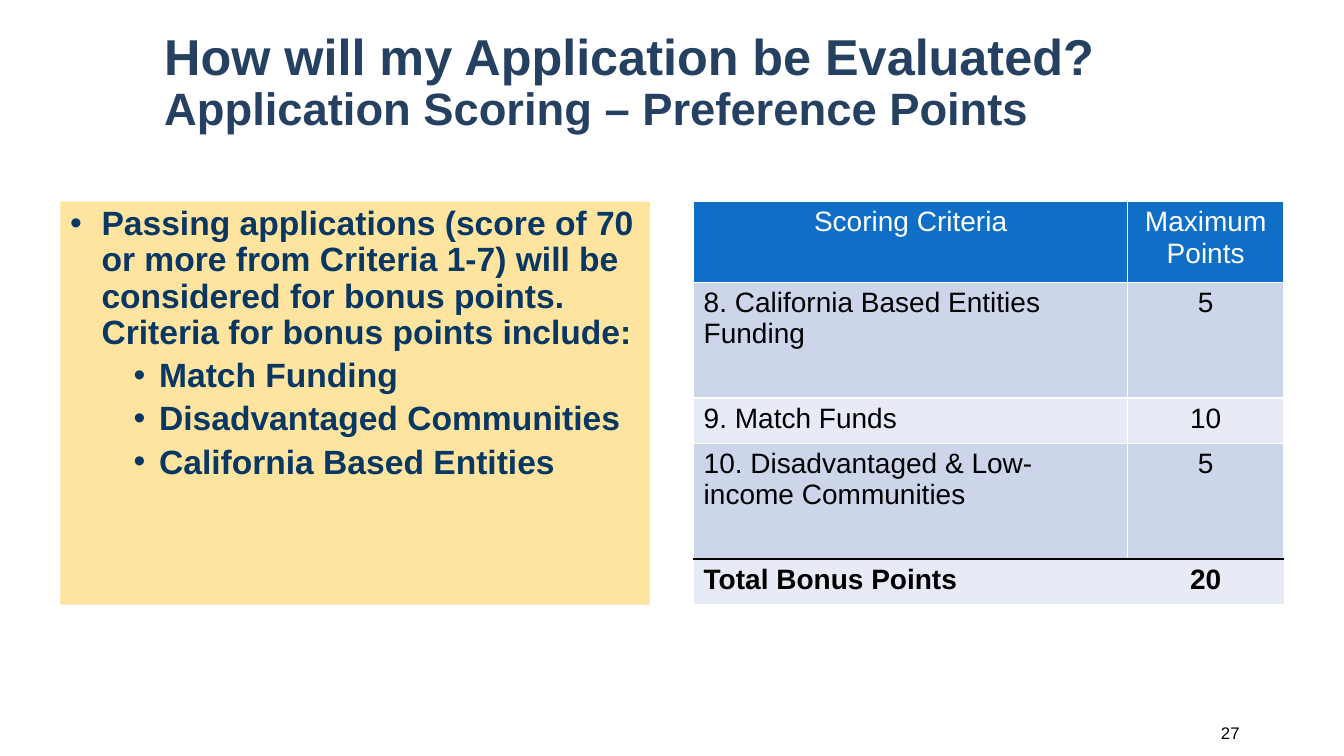
from dataclasses import dataclass

from lxml import etree
from pptx import Presentation
from pptx import util as u
from pptx.dml.color import RGBColor
from pptx.enum import shapes, text
from pptx.oxml import ns


@dataclass(frozen=True)
class Theme:
    font: str = "Arial"
    heading: str = "254061"
    criteria_text: str = "083763"
    panel: str = "FFE49F"
    header: str = "0F6FC6"
    bands: tuple = ("CCD5EA", "E7EBF5")
    white: str = "FFFFFF"
    black: str = "000000"
    title_size: float = 36
    subtitle_size: float = 32.4
    bullet_size: float = 24
    table_size: float = 20
    number_size: float = 12


def write(paragraph, words, *, font, size, color, bold=False, align=None, spacing=None, before=None):
    """Append formatted words to a paragraph."""
    if align is not None:
        paragraph.alignment = align
    if spacing is not None:
        paragraph.line_spacing = spacing
    if before is not None:
        paragraph.space_before = u.Pt(before)
    run = paragraph.add_run()
    run.text = words
    run.font.name = font
    run.font.size = u.Pt(size)
    run.font.bold = bold
    run.font.color.rgb = RGBColor.from_string(color)


class SlideBuilder:
    def __init__(self, slide, theme):
        self.slide, self.theme = slide, theme

    def text_box(self, *box):
        """Add a middle-anchored text box and return its first paragraph."""
        frame = self.slide.shapes.add_textbox(*map(u.Cm, box)).text_frame
        frame.word_wrap = True
        frame.vertical_anchor = text.MSO_ANCHOR.MIDDLE
        return frame.paragraphs[0]

    def title(self, heading, subtitle, *box):
        t = self.theme
        paragraph = self.text_box(*box)
        style = dict(font=t.font, color=t.heading, bold=True, spacing=0.9)
        write(paragraph, heading, size=t.title_size, **style)
        paragraph.add_line_break()
        write(paragraph, subtitle, size=t.subtitle_size, **style)

    def bullet_panel(self, items, *box):
        """Items are (level, words) pairs."""
        t = self.theme
        panel = self.slide.shapes.add_shape(shapes.MSO_SHAPE.RECTANGLE, *map(u.Cm, box))
        panel.shadow.inherit = False
        panel.fill.solid()
        panel.fill.fore_color.rgb = RGBColor.from_string(t.panel)
        panel.line.fill.background()
        frame = panel.text_frame
        frame.word_wrap = True
        frame.vertical_anchor = text.MSO_ANCHOR.TOP
        for index, (level, words) in enumerate(items):
            paragraph = frame.add_paragraph() if index else frame.paragraphs[0]
            paragraph.level = level
            margin, hang = ((0.79, 0.79), (2.24, 0.64))[level]
            props = paragraph._p.get_or_add_pPr()
            props.set("marL", str(u.Cm(margin)))
            props.set("indent", str(-u.Cm(hang)))
            etree.SubElement(props, ns.qn("a:buFont"), typeface=t.font)
            etree.SubElement(props, ns.qn("a:buChar"), char="•")
            write(paragraph, words, font=t.font, size=t.bullet_size, color=t.criteria_text, bold=True,
                  align=text.PP_ALIGN.LEFT, spacing=0.9, before=5 if index else 0)

    def borders(self, cell, **colors):
        """Draw 1 pt cell edges by side; a side without a colour gets no line."""
        props = cell._tc.get_or_add_tcPr()
        for side in "LRTB":
            edge = etree.SubElement(props, ns.qn(f"a:ln{side}"), w=str(u.Pt(1)))
            if colors.get(side):
                fill = etree.SubElement(edge, ns.qn("a:solidFill"))
                etree.SubElement(fill, ns.qn("a:srgbClr"), val=colors[side])
            else:
                etree.SubElement(edge, ns.qn("a:noFill"))

    def score_table(self, rows, widths, heights, left, top):
        t = self.theme
        box = (left, top, sum(widths), sum(heights))
        table = self.slide.shapes.add_table(len(rows), len(widths), *map(u.Cm, box)).table
        for column, width in zip(table.columns, widths):
            column.width = u.Cm(width)
        total = len(rows) - 1
        for r, (row, height) in enumerate(zip(rows, heights)):
            table.rows[r].height = u.Cm(height)
            for c, words in enumerate(row):
                cell = table.cell(r, c)
                if r == total:
                    self.borders(cell, T=t.black)
                else:
                    bottom = t.black if r == total - 1 else t.white
                    self.borders(cell, L=t.white, R=t.white, T=t.white, B=bottom)
                cell.fill.solid()
                fill = t.bands[(r - 1) % 2] if r else t.header
                cell.fill.fore_color.rgb = RGBColor.from_string(fill)
                centred = r == 0 or c == 1
                write(cell.text_frame.paragraphs[0], words, font=t.font, size=t.table_size,
                      color=t.black if r else t.white, bold=r == total,
                      align=text.PP_ALIGN.CENTER if centred else text.PP_ALIGN.LEFT)

    def page_number(self, number, *box):
        t = self.theme
        write(self.text_box(*box), number, font=t.font, size=t.number_size, color=t.black,
              align=text.PP_ALIGN.RIGHT)


def main():
    deck = Presentation()
    deck.slide_width, deck.slide_height = u.Cm(33.87), u.Cm(19.05)
    builder = SlideBuilder(deck.slides.add_slide(deck.slide_layouts[6]), Theme())

    # Heading
    builder.title("How will my Application be Evaluated?",
                  "Application Scoring – Preference Points", 3.89, 0.66, 27.66, 2.9)

    # Bonus point criteria
    bonus_criteria = [
        (0, "Passing applications (score of 70 or more from Criteria 1-7) will be considered "
            "for bonus points. Criteria for bonus points include:"),
        (1, "Match Funding"),
        (1, "Disadvantaged Communities"),
        (1, "California Based Entities"),
    ]
    builder.bullet_panel(bonus_criteria, 1.52, 5.08, 14.86, 10.16)

    # Maximum points per criterion
    scores = [
        ("Scoring Criteria", "Maximum Points"),
        ("8. California Based Entities Funding", "5"),
        ("9. Match Funds", "10"),
        ("10. Disadvantaged & Low-income Communities", "5"),
        ("Total Bonus Points", "20"),
    ]
    builder.score_table(scores, (10.94, 3.93), (2.03, 2.92, 1.14, 2.92, 1.14), 17.48, 5.08)

    # Page number
    builder.page_number("27", 26.59, 17.96, 4.9, 1.02)

    deck.save("out.pptx")


if __name__ == "__main__":
    main()
